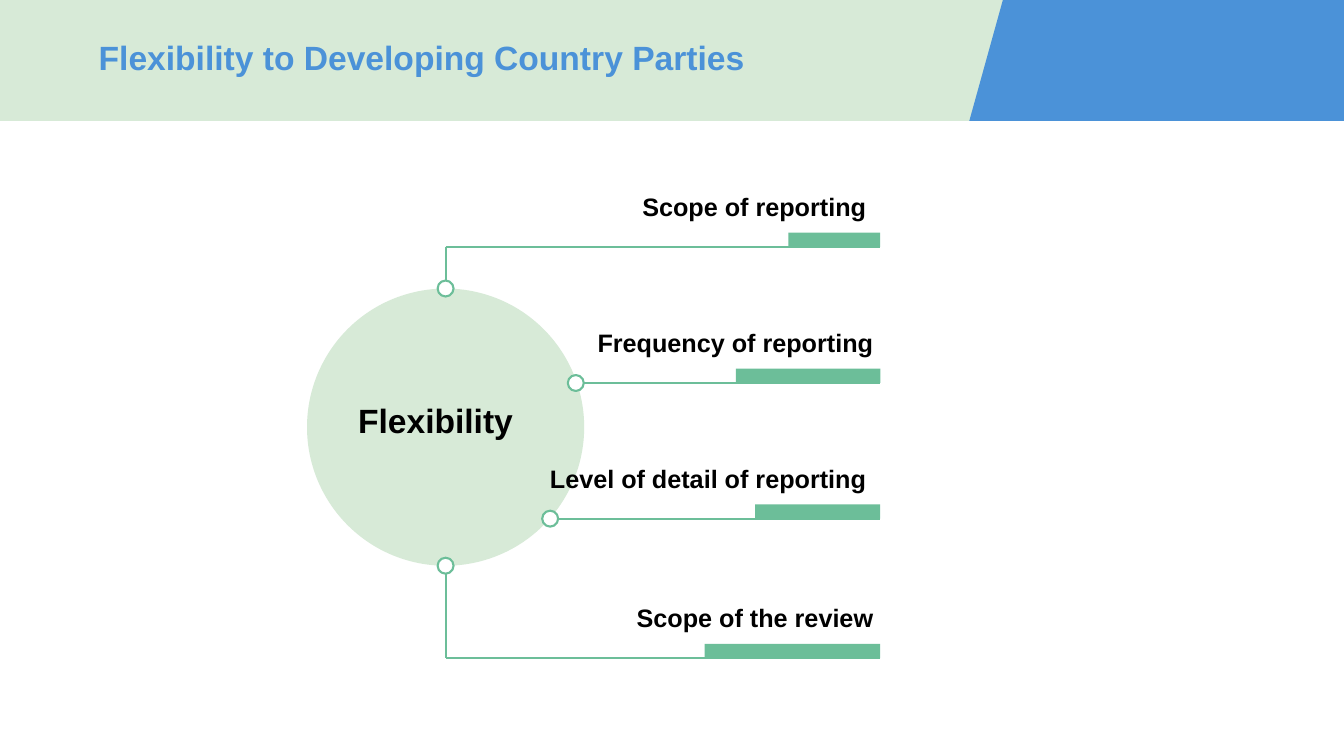
from dataclasses import dataclass

from lxml import etree
from pptx import Presentation
from pptx import util as u
from pptx.dml.color import RGBColor
from pptx.enum import shapes, text
from pptx.oxml.ns import qn

COLUMNS, ROWS = 160, 90


@dataclass(frozen=True)
class Theme:
    font: str = "Arial"
    pale: RGBColor = RGBColor(0xD7, 0xEA, 0xD7)
    blue: RGBColor = RGBColor(0x4B, 0x92, 0xD8)
    green: RGBColor = RGBColor(0x6C, 0xBE, 0x99)
    white: RGBColor = RGBColor(0xFF, 0xFF, 0xFF)
    black: RGBColor = RGBColor(0, 0, 0)
    heading: u.Pt = u.Pt(24)
    label: u.Pt = u.Pt(18)
    rule: u.Pt = u.Pt(1.5)


@dataclass(frozen=True)
class Branch:
    label: str
    rule_row: float
    bar_width: float
    dot_column: float
    dot_row: float
    label_inset: float


THEME = Theme()
BAND_HEIGHT = 14.4
HUB_COLUMN, HUB_ROW, HUB_SIZE = 53.05, 50.85, 33
HUB_TOP, HUB_BOTTOM = HUB_ROW - HUB_SIZE / 2, HUB_ROW + HUB_SIZE / 2
RIGHT_EDGE = 104.8
DOT_SIZE, BAR_HEIGHT = 1.9, 1.7
LABEL_WIDTH, LABEL_HEIGHT, LABEL_GAP = 45.15, 4.2, 2.4

BRANCHES = [
    Branch("Scope of reporting", 29.4, 10.95, HUB_COLUMN, HUB_TOP, 1.67),
    Branch("Frequency of reporting", 45.6, 17.2, 68.55, 45.6, 0.83),
    Branch("Level of detail of reporting", 61.75, 14.9, 65.5, 61.75, 1.67),
    Branch("Scope of the review", 78.35, 20.9, HUB_COLUMN, HUB_BOTTOM, 0.83),
]

deck = Presentation()
deck.slide_width, deck.slide_height = u.Inches(13.3333), u.Inches(7.5)
slide = deck.slides.add_slide(deck.slide_layouts[5])


def col(count: float) -> int:
    return round(deck.slide_width * count / COLUMNS)


def row(count: float) -> int:
    return round(deck.slide_height * count / ROWS)


def paint(shape, fill: RGBColor, line: RGBColor | None = None) -> None:
    shape.shadow.inherit = False
    shape.fill.solid()
    shape.fill.fore_color.rgb = fill
    if line is None:
        shape.line.fill.background()
    else:
        shape.line.color.rgb = line
        shape.line.width = THEME.rule


def add_block(kind, left: float, top: float, width: float, height: float,
              fill: RGBColor, line: RGBColor | None = None) -> None:
    block = slide.shapes.add_shape(kind, col(left), row(top), col(width), row(height))
    paint(block, fill, line)


def add_rule(left: float, top: float, right: float, bottom: float) -> None:
    rule = slide.shapes.add_connector(
        shapes.MSO_CONNECTOR.STRAIGHT, col(left), row(top), col(right), row(bottom))
    rule.line.color.rgb = THEME.green
    rule.line.width = THEME.rule
    etree.SubElement(rule._element.spPr, qn("a:effectLst"))


def write(shape, words: str, size: u.Pt, color: RGBColor, align, anchor,
          right_inset: float = 0, bottom_inset: float = 0) -> None:
    frame = shape.text_frame
    frame.word_wrap = True
    frame.auto_size = text.MSO_AUTO_SIZE.NONE
    frame.vertical_anchor = anchor
    frame.margin_left = frame.margin_top = 0
    frame.margin_right, frame.margin_bottom = col(right_inset), row(bottom_inset)
    paragraph = frame.paragraphs[0]
    paragraph.text = words
    paragraph.alignment = align
    paragraph.font.name = THEME.font
    paragraph.font.size = size
    paragraph.font.bold = True
    paragraph.font.color.rgb = color


def add_header() -> None:
    add_block(shapes.MSO_SHAPE.RECTANGLE, 0, 0, COLUMNS, BAND_HEIGHT, THEME.pale)
    outline = slide.shapes.build_freeform(col(119.4), 0, scale=1.0)
    outline.add_line_segments([
        (col(COLUMNS), 0),
        (col(COLUMNS), row(BAND_HEIGHT)),
        (col(115.4), row(BAND_HEIGHT)),
    ])
    paint(outline.convert_to_shape(), THEME.blue)

    title = slide.shapes.title
    title.left, title.top = col(11.75), row(3.45)
    title.width, title.height = col(94.2), row(7.3)
    write(title, "Flexibility to Developing Country Parties", THEME.heading,
          THEME.blue, text.PP_ALIGN.LEFT, text.MSO_ANCHOR.MIDDLE)
    title.text_frame.paragraphs[0].line_spacing = 0.9
    slide.shapes._spTree.append(title._element)


def add_hub() -> None:
    add_block(shapes.MSO_SHAPE.OVAL, HUB_COLUMN - HUB_SIZE / 2, HUB_TOP,
              HUB_SIZE, HUB_SIZE, THEME.pale)
    caption = slide.shapes.add_textbox(col(40.1), row(47.65), col(25.8), row(5.4))
    write(caption, "Flexibility", THEME.heading, THEME.black,
          text.PP_ALIGN.CENTER, text.MSO_ANCHOR.MIDDLE, 2.3, 0.6)


def add_branch(branch: Branch) -> None:
    rule_start = branch.dot_column
    if branch.rule_row != branch.dot_row:
        add_rule(branch.dot_column, branch.dot_row, branch.dot_column, branch.rule_row)
    else:
        rule_start += DOT_SIZE / 2
    label = slide.shapes.add_textbox(
        col(RIGHT_EDGE - LABEL_WIDTH), row(branch.rule_row - LABEL_GAP - LABEL_HEIGHT),
        col(LABEL_WIDTH), row(LABEL_HEIGHT))
    write(label, branch.label, THEME.label, THEME.black, text.PP_ALIGN.RIGHT,
          text.MSO_ANCHOR.BOTTOM, branch.label_inset, 0.6)
    add_block(shapes.MSO_SHAPE.RECTANGLE, RIGHT_EDGE - branch.bar_width,
              branch.rule_row - BAR_HEIGHT, branch.bar_width, BAR_HEIGHT, THEME.green)
    add_rule(rule_start, branch.rule_row, RIGHT_EDGE, branch.rule_row)
    add_block(shapes.MSO_SHAPE.OVAL, branch.dot_column - DOT_SIZE / 2,
              branch.dot_row - DOT_SIZE / 2, DOT_SIZE, DOT_SIZE,
              THEME.white, THEME.green)


def main() -> None:
    add_header()
    add_hub()
    for branch in BRANCHES:
        add_branch(branch)
    deck.save("out.pptx")


if __name__ == "__main__":
    main()
